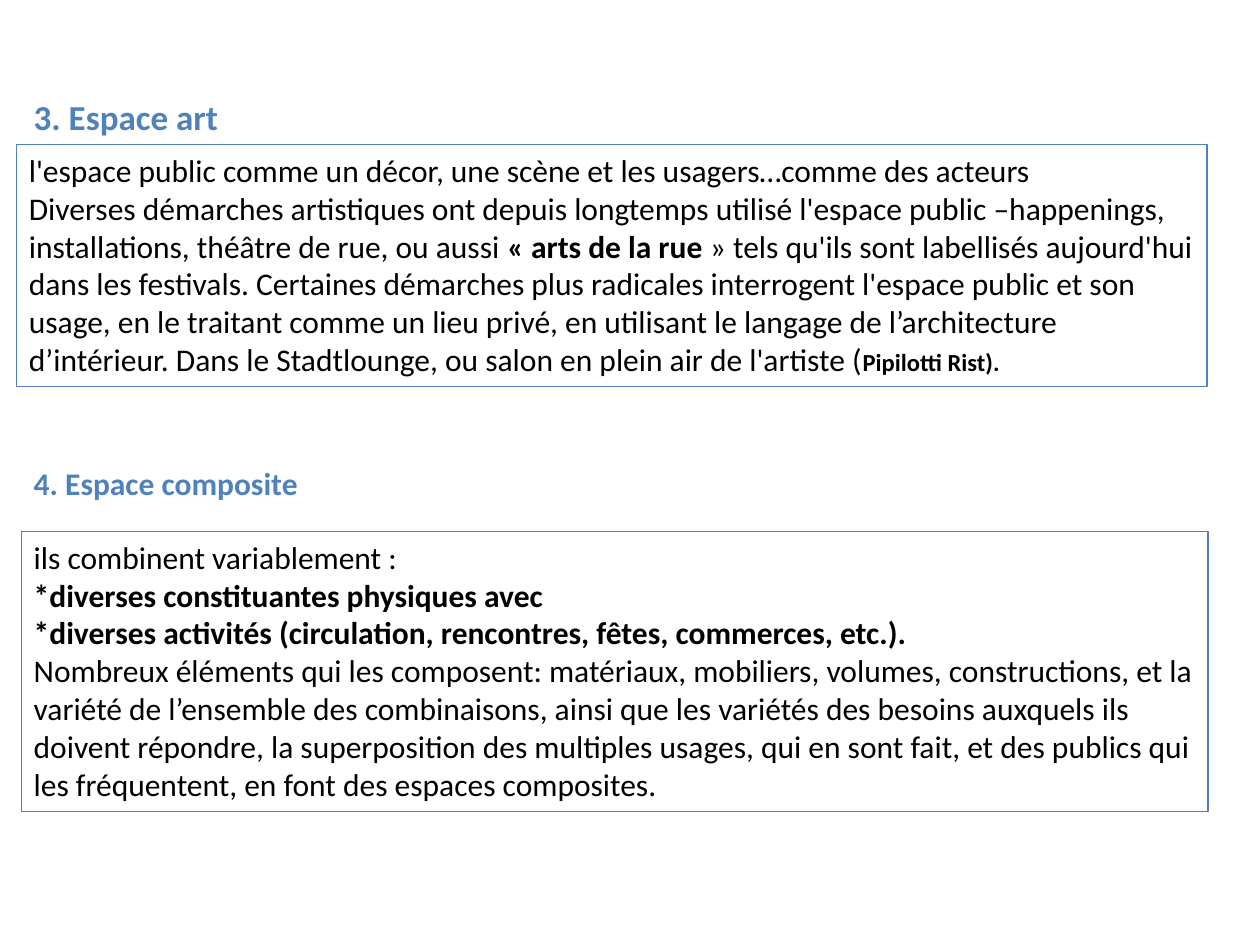
import pptx
import pptx.dml.color
import pptx.enum.shapes
import pptx.enum.text
import pptx.util
from dataclasses import dataclass

Pt = pptx.util.Pt
RGBColor = pptx.dml.color.RGBColor


@dataclass(frozen=True)
class Theme:
    font: str = "Calibri"
    accent: RGBColor = RGBColor(0x4F, 0x81, 0xBD)
    ink: RGBColor = RGBColor(0, 0, 0)
    art_heading: int = 20
    body: int = 18
    citation: int = 14
    border: float = 0.75


THEME = Theme()

# Each paragraph is a list of (text, bold, size) pieces
ART_TEXT = [
    [("l'espace public comme un décor, une scène et les usagers…comme des acteurs",
      False, THEME.body)],
    [("Diverses démarches artistiques ont depuis longtemps utilisé l'espace public "
      "–happenings, installations, théâtre de rue, ou aussi ", False, THEME.body),
     ("« arts de la rue ", True, THEME.body),
     ("» tels qu'ils sont labellisés aujourd'hui dans les festivals. Certaines "
      "démarches plus radicales interrogent l'espace public et son usage, en le "
      "traitant comme un lieu privé, en utilisant le langage de l’architecture "
      "d’intérieur. Dans le Stadtlounge, ou salon en plein air de l'artiste (",
      False, THEME.body),
     ("Pipilotti Rist).", True, THEME.citation)],
]
COMPOSITE_TEXT = [
    [("ils combinent variablement :", False, THEME.body)],
    [("*diverses constituantes physiques avec", True, THEME.body)],
    [("*diverses activités (circulation, rencontres, fêtes, commerces, etc.).",
      True, THEME.body)],
    [("Nombreux éléments qui les composent: matériaux, mobiliers, volumes, "
      "constructions, et la variété de l’ensemble des combinaisons, ainsi que les "
      "variétés des besoins auxquels ils doivent répondre, la superposition des "
      "multiples usages, qui en sont fait, et des publics qui les fréquentent, en "
      "font des espaces composites.", False, THEME.body)],
]


def style_run(run, size, color, bold):
    run.font.name = THEME.font
    run.font.size = Pt(size)
    run.font.color.rgb = color
    run.font.bold = bold


def add_heading(slide, text, left, top, width, height, size):
    heading = slide.shapes.add_textbox(Pt(left), Pt(top), Pt(width), Pt(height))
    frame = heading.text_frame
    frame.text = text
    frame.word_wrap = False
    frame.auto_size = pptx.enum.text.MSO_AUTO_SIZE.SHAPE_TO_FIT_TEXT
    style_run(frame.paragraphs[0].runs[0], size, THEME.accent, True)


def add_framed_text(slide, paragraphs, left, top, width, height):
    panel = slide.shapes.add_shape(
        pptx.enum.shapes.MSO_SHAPE.RECTANGLE,
        Pt(left), Pt(top), Pt(width), Pt(height))
    panel.shadow.inherit = False
    panel.fill.background()
    panel.line.color.rgb = THEME.accent
    panel.line.width = Pt(THEME.border)

    frame = panel.text_frame
    frame.word_wrap = True
    frame.auto_size = pptx.enum.text.MSO_AUTO_SIZE.SHAPE_TO_FIT_TEXT
    frame.vertical_anchor = pptx.enum.text.MSO_ANCHOR.TOP
    for index, pieces in enumerate(paragraphs):
        paragraph = frame.add_paragraph() if index else frame.paragraphs[0]
        paragraph.alignment = pptx.enum.text.PP_ALIGN.LEFT
        for text, bold, size in pieces:
            run = paragraph.add_run()
            run.text = text
            style_run(run, size, THEME.ink, bold)


def main():
    deck = pptx.Presentation()
    deck.slide_width, deck.slide_height = Pt(720), Pt(540)
    slide = deck.slides.add_slide(deck.slide_layouts[6])

    # Space as art
    add_heading(slide, "3. Espace art", 12.2, 51.1, 121, 31.5, THEME.art_heading)
    add_framed_text(slide, ART_TEXT, 9.4, 82.8, 680.4, 138)

    # Composite space
    add_heading(slide, "4. Espace composite", 12.2, 261.4, 166.3, 29, THEME.body)
    add_framed_text(slide, COMPOSITE_TEXT, 12.2, 303.8, 678.2, 159.8)

    deck.save("out.pptx")


if __name__ == "__main__":
    main()
